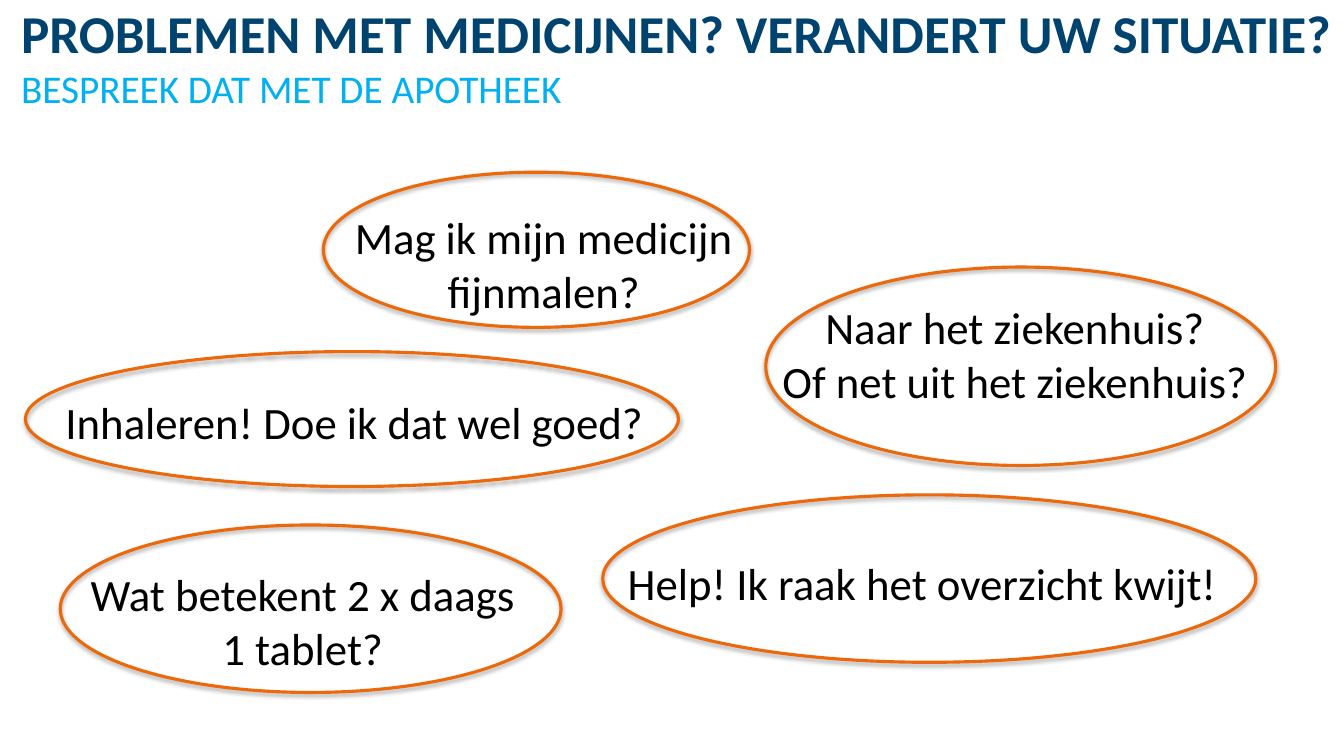
from dataclasses import dataclass

from lxml.etree import SubElement
from pptx import Presentation
from pptx.dml.color import RGBColor
from pptx.enum.shapes import MSO_SHAPE
from pptx.enum.text import MSO_ANCHOR, MSO_AUTO_SIZE, PP_ALIGN
from pptx.oxml.ns import qn
from pptx.shapes.autoshape import Shape
from pptx.slide import Slide
from pptx.text.text import Font
from pptx.util import Cm, Pt

COLOURS = {
    "heading": "00436F",
    "subheading": "00B0F0",
    "question": "000000",
    "outline": "EB690B",
    "shadow": "000000",
}
FONT_NAME = "Calibri"


@dataclass(frozen=True)
class Box:
    """Left, top, width and height in centimetres."""
    left: float
    top: float
    width: float
    height: float

    def lengths(self) -> tuple[Cm, Cm, Cm, Cm]:
        """Return the four measures as lengths."""
        return Cm(self.left), Cm(self.top), Cm(self.width), Cm(self.height)


@dataclass(frozen=True)
class Question:
    """A patient's question and the oval around it."""
    wording: str
    caption: Box
    oval: Box


QUESTIONS = [
    Question("Mag ik mijn medicijn\nfijnmalen?",
             Box(8.51, 5.16, 10.39, 3), Box(8.15, 4.34, 10.74, 3.91)),
    Question("Wat betekent 2 x daags\v1 tablet?",
             Box(1.85, 14.15, 11.56, 3), Box(1.52, 13.23, 12.62, 4.22)),
    Question("Inhaleren! Doe ik dat wel goed?",
             Box(1.24, 9.81, 15.39, 1.63), Box(0.64, 8.86, 16.46, 3.4)),
    Question("Help! Ik raak het overzicht kwijt!",
             Box(15.42, 13.89, 15.65, 1.63), Box(15.19, 12.47, 16.46, 4.22)),
    Question("Naar het ziekenhuis?\nOf net uit het ziekenhuis?",
             Box(19.41, 7.44, 12.34, 3), Box(19.3, 6.73, 12.85, 5)),
]


def style_font(font: Font, size: float, colour: str, bold: bool = False) -> None:
    """Set the typeface, size, colour and weight."""
    font.name = FONT_NAME
    font.size = Pt(size)
    font.bold = bold
    font.color.rgb = RGBColor.from_string(COLOURS[colour])


def add_heading(slide: Slide) -> None:
    """Fill the title placeholder with the heading and its subheading."""
    heading = slide.shapes.title
    heading.left, heading.top, heading.width, heading.height = Box(0.53, 0, 33.33, 6.07).lengths()
    frame = heading.text_frame
    frame.text = "PROBLEMEN MET MEDICIJNEN? VERANDERT UW SITUATIE?\vBESPREEK DAT MET DE APOTHEEK"
    frame.margin_left = frame.margin_top = frame.margin_right = frame.margin_bottom = 0
    frame.vertical_anchor = MSO_ANCHOR.TOP
    frame.auto_size = MSO_AUTO_SIZE.NONE
    frame.word_wrap = True
    lines = frame.paragraphs[0]
    lines.alignment = PP_ALIGN.LEFT
    main_line, sub_line = lines.runs
    style_font(main_line.font, 38, "heading", bold=True)
    style_font(sub_line.font, 28, "subheading")


def add_caption(slide: Slide, question: Question) -> None:
    """Write the wording of a question."""
    frame = slide.shapes.add_textbox(*question.caption.lengths()).text_frame
    frame.word_wrap = False
    frame.text = question.wording
    for line in frame.paragraphs:
        line.alignment = PP_ALIGN.CENTER
        for run in line.runs:
            style_font(run.font, 32, "question")


def cast_shadow(oval: Shape) -> None:
    """Give the oval a soft shadow straight below."""
    oval.shadow.inherit = False
    effects = oval.element.spPr.find(qn("a:effectLst"))
    shadow = SubElement(effects, qn("a:outerShdw"), blurRad=str(Pt(3.1)),
                        dist=str(Pt(1.8)), dir="5400000", rotWithShape="0")
    tint = SubElement(shadow, qn("a:srgbClr"), val=COLOURS["shadow"])
    SubElement(tint, qn("a:alpha"), val="35000")


def add_oval(slide: Slide, question: Question) -> None:
    """Draw the oval around a question."""
    oval = slide.shapes.add_shape(MSO_SHAPE.OVAL, *question.oval.lengths())
    oval.fill.background()
    oval.line.color.rgb = RGBColor.from_string(COLOURS["outline"])
    oval.line.width = Pt(2.25)
    cast_shadow(oval)


def main() -> None:
    """Build and save the slide."""
    presentation = Presentation()
    presentation.slide_width, presentation.slide_height = Cm(33.87), Cm(19.05)
    slide = presentation.slides.add_slide(presentation.slide_layouts[5])
    add_heading(slide)
    for question in QUESTIONS:
        add_caption(slide, question)
    for question in QUESTIONS:
        add_oval(slide, question)
    presentation.save("out.pptx")


if __name__ == "__main__":
    main()
